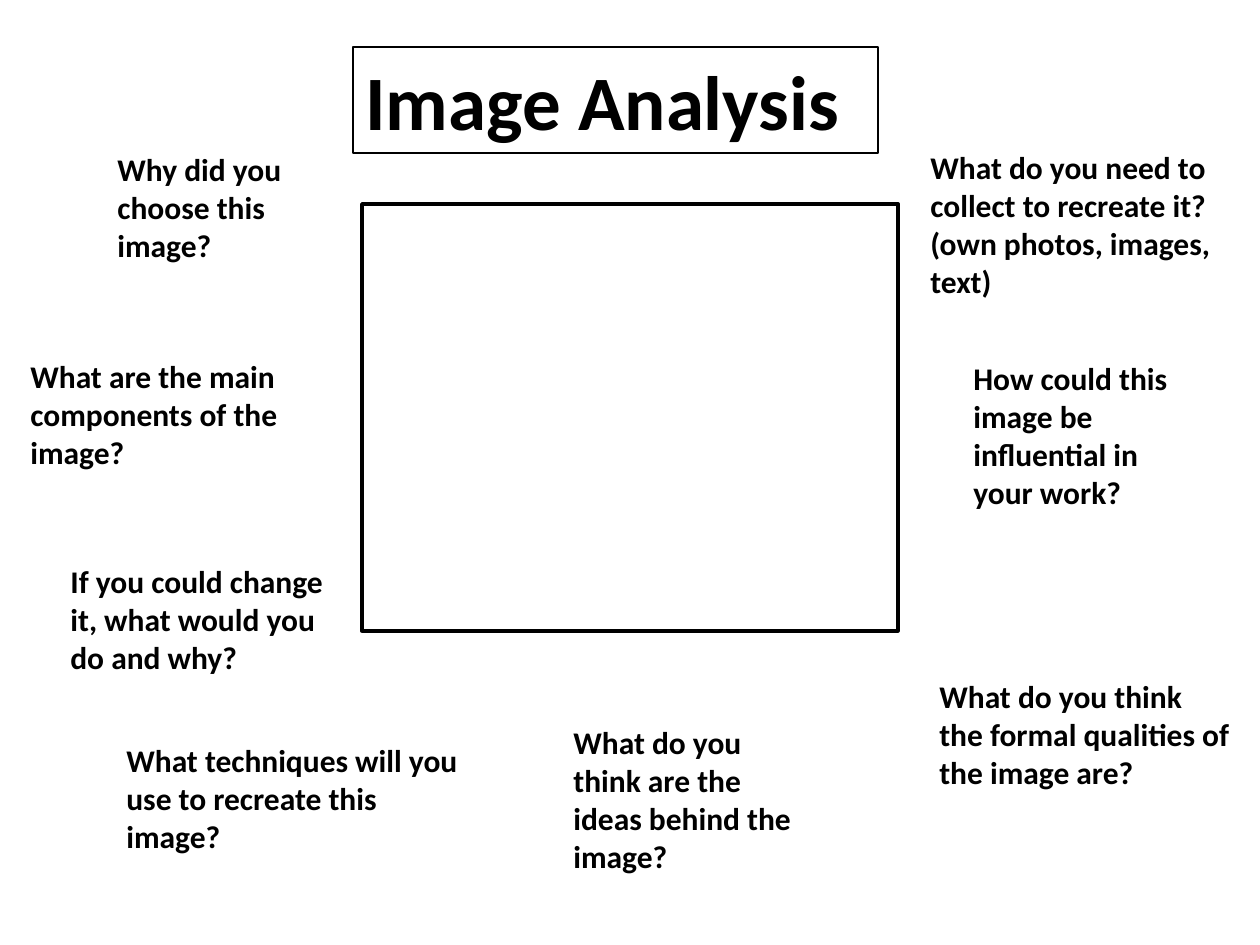
from pptx import Presentation
from pptx import util as u
from pptx.dml.color import RGBColor
from pptx.enum import shapes, text

PX = 914400 // 126
BLACK, WHITE = "000000", "FFFFFF"

# Content: left, top, width, height in px
TITLE = ("Image Analysis", (353, 47, 525, 106))
FRAME = (362, 204, 536, 427)
QUESTIONS = [
    ("Why did you choose this image?", (105, 144, 248, 127)),
    ("What are the main components of the image?", (18, 351, 364, 127)),
    ("If you could change it, what would you do and why?", (58, 556, 285, 127)),
    ("What techniques will you use to recreate this image?", (114, 735, 369, 127)),
    ("What do you think are the ideas behind the image?", (561, 717, 248, 165)),
    ("What do you think the formal qualities of the image are?", (927, 671, 316, 127)),
    ("How could this image be influential in your work?", (961, 353, 248, 165)),
    ("What do you need to collect to recreate it? (own photos, images, text)",
     (918, 142, 321, 165)),
]


def color(value):
    return RGBColor.from_string(value)


def emu(place):
    return [length * PX for length in place]


def add_outline(page, place, weight, fill=None):
    box = page.shapes.add_shape(shapes.MSO_SHAPE.RECTANGLE, *emu(place))
    box.shadow.inherit = False
    if fill:
        box.fill.solid()
        box.fill.fore_color.rgb = color(fill)
    else:
        box.fill.background()
    box.line.color.rgb = color(BLACK)
    box.line.width = u.Pt(weight)
    return box


def write(box, words, size):
    frame = box.text_frame
    layout = {"word_wrap": True, "vertical_anchor": text.MSO_ANCHOR.TOP,
              "auto_size": text.MSO_AUTO_SIZE.SHAPE_TO_FIT_TEXT}
    for name, value in layout.items():
        setattr(frame, name, value)
    para = frame.paragraphs[0]
    para.alignment = text.PP_ALIGN.LEFT
    span = para.add_run()
    span.text = words
    for name, value in {"name": "Calibri", "size": u.Pt(size), "bold": True}.items():
        setattr(span.font, name, value)
    span.font.color.rgb = color(BLACK)


def main():
    deck = Presentation()
    deck.slide_width, deck.slide_height = u.Inches(10), u.Inches(7.5)
    page = deck.slides.add_slide(deck.slide_layouts[6])

    # Title and empty image frame
    heading, place = TITLE
    write(add_outline(page, place, 0.75, WHITE), heading, 44)
    add_outline(page, FRAME, 2)

    # Questions around the frame
    for question, place in QUESTIONS:
        write(page.shapes.add_textbox(*emu(place)), question, 18)

    deck.save("out.pptx")


if __name__ == "__main__":
    main()
